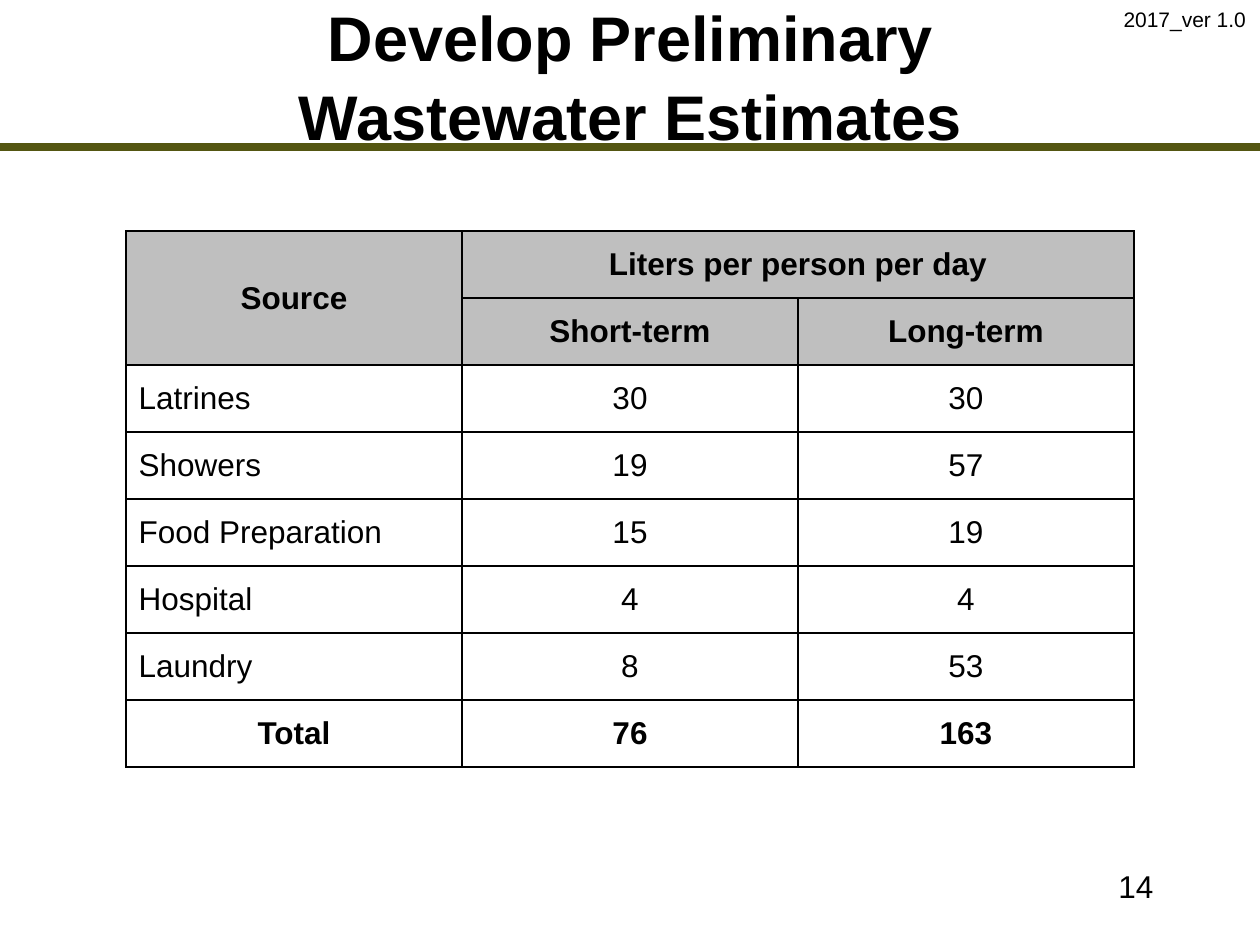
from lxml.etree import SubElement
from pptx import Presentation
from pptx.dml.color import RGBColor
from pptx.enum.shapes import MSO_CONNECTOR as Link
from pptx.enum.text import MSO_ANCHOR as Anchor, MSO_AUTO_SIZE as Fit, PP_ALIGN as Align
from pptx.oxml.ns import qn
from pptx.util import Cm, Pt

BLACK = RGBColor(0x00, 0x00, 0x00)
GREY = RGBColor(0xBF, 0xBF, 0xBF)
OLIVE = RGBColor(0x54, 0x56, 0x12)

ROWS = [
    ("Source", "Liters per person per day", ""),
    ("", "Short-term", "Long-term"),
    ("Latrines", "30", "30"),
    ("Showers", "19", "57"),
    ("Food Preparation", "15", "19"),
    ("Hospital", "4", "4"),
    ("Laundry", "8", "53"),
    ("Total", "76", "163"),
]
HEADS = 2


def write(frame, text, size, bold=False, align=Align.LEFT):
    para = frame.paragraphs[0]
    para.alignment = align
    run = para.add_run()
    run.text = text
    font = run.font
    font.name, font.size, font.bold = "Arial", Pt(size), bold
    font.color.rgb = BLACK
    return para


def add_text(slide, box, text, size, wrap=True, anchor=Anchor.TOP, **style):
    frame = slide.shapes.add_textbox(*map(Cm, box)).text_frame
    frame.word_wrap = wrap
    frame.auto_size = Fit.NONE if wrap else Fit.SHAPE_TO_FIT_TEXT
    frame.vertical_anchor = anchor
    return write(frame, text, size, **style)


def add_rule(slide, y):
    rule = slide.shapes.add_connector(Link.STRAIGHT, 0, Cm(y), Cm(25.4), Cm(y))
    rule.line.color.rgb = OLIVE
    rule.line.width = Pt(4.5)
    SubElement(rule.element.spPr, qn("a:effectLst"))


def add_edges(cell):
    """Draw a thin black line on all four sides; call before the fill is set."""
    props = cell._tc.get_or_add_tcPr()
    for side in ("lnL", "lnR", "lnT", "lnB"):
        line = SubElement(props, qn(f"a:{side}"), w=str(Pt(1)))
        fill = SubElement(line, qn("a:solidFill"))
        SubElement(fill, qn("a:srgbClr"), val=str(BLACK))


def add_grid(slide):
    count = len(ROWS)
    table = slide.shapes.add_table(
        count, 3, Cm(2.54), Cm(4.66), Cm(20.32), Cm(1.35 * count)).table
    table.cell(0, 0).merge(table.cell(1, 0))
    table.cell(0, 1).merge(table.cell(0, 2))
    for r, row in enumerate(ROWS):
        head = r < HEADS
        strong = head or r == count - 1
        for c, text in enumerate(row):
            cell = table.cell(r, c)
            add_edges(cell)
            if head:
                cell.fill.solid()
                cell.fill.fore_color.rgb = GREY
            else:
                cell.fill.background()
            cell.vertical_anchor = Anchor.MIDDLE
            if text:
                align = Align.CENTER if strong or c else Align.LEFT
                write(cell.text_frame, text, 18, strong, align)


def main():
    deck = Presentation()
    deck.slide_width, deck.slide_height = Cm(25.4), Cm(19.05)
    slide = deck.slides.add_slide(deck.slide_layouts[6])
    add_rule(slide, 2.97)
    title = add_text(slide, (2.97, 0.43, 19.48, 2.11),
                     "Develop Preliminary Wastewater Estimates", 36,
                     anchor=Anchor.MIDDLE, bold=True, align=Align.CENTER)
    title.line_spacing = 1.05
    add_text(slide, (18.2, 17.35, 5.3, 1.27), "14", 18, align=Align.RIGHT)
    add_grid(slide)
    add_text(slide, (22.4, 0, 3, 0.76), "2017_ver 1.0", 12, wrap=False)
    deck.save("out.pptx")


if __name__ == "__main__":
    main()
